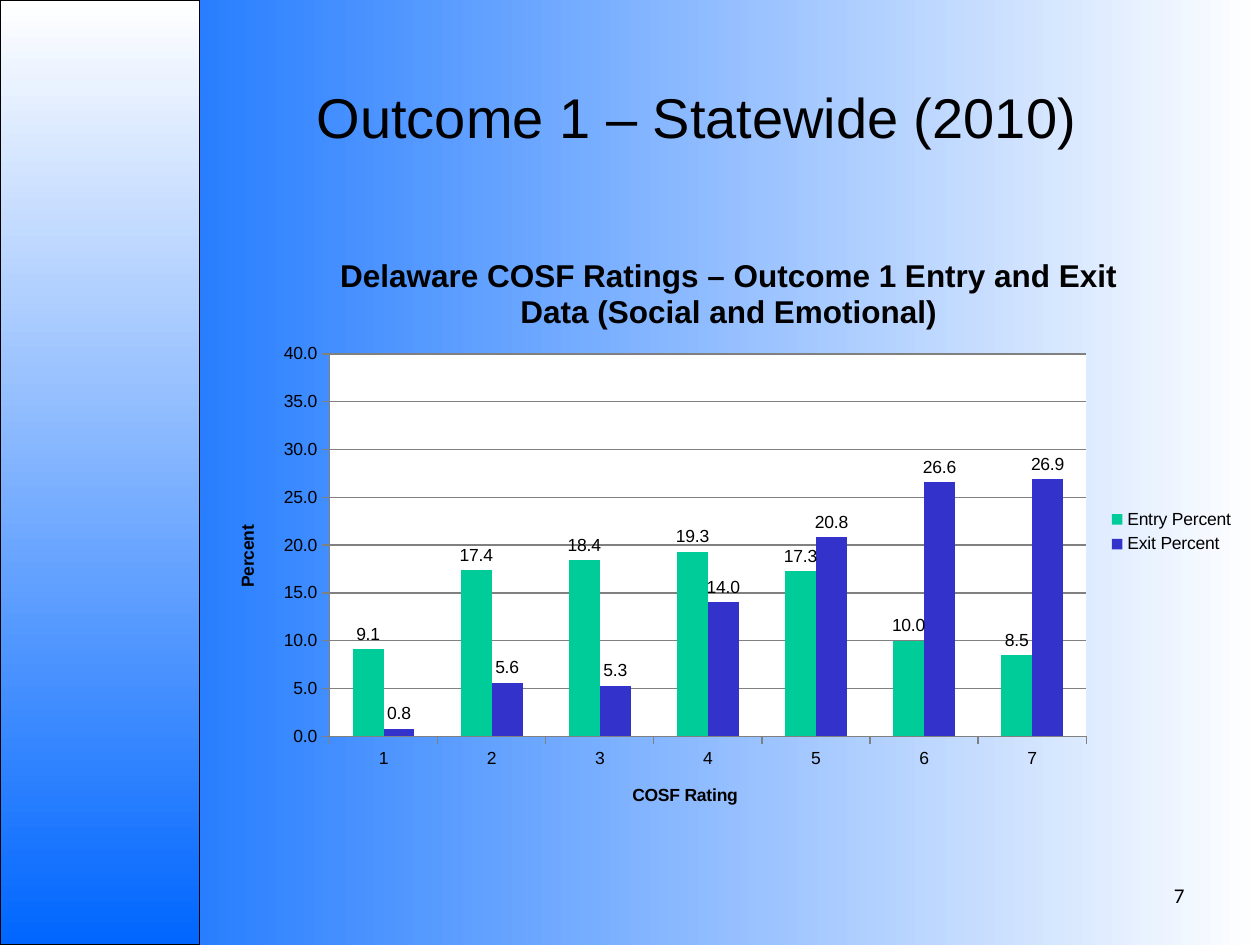
"""Build the statewide Outcome 1 slide with its entry and exit ratings chart."""
from dataclasses import dataclass

from lxml import etree
from pptx import Presentation
from pptx import util as u
from pptx.chart.data import CategoryChartData
from pptx.dml.color import RGBColor
from pptx.enum import chart as charts, shapes, text
from pptx.oxml import parse_xml
from pptx.oxml.ns import nsdecls, qn


@dataclass(frozen=True)
class Theme:
    blue = RGBColor.from_string("0066FF")
    white = RGBColor.from_string("FFFFFF")
    black = RGBColor.from_string("000000")
    grid = RGBColor.from_string("808080")
    series = (RGBColor.from_string("00CC99"), RGBColor.from_string("3333CC"))
    font = "Arial"
    number_font = "Calibri"
    title_size = u.Pt(32)
    chart_title_size = u.Pt(18)
    number_size = u.Pt(12)
    chart_size = u.Pt(10)


def fill_gradient(fill, start, end, angle):
    fill.gradient()
    fill.gradient_angle = angle
    for stop, color in zip(fill.gradient_stops, (start, end)):
        stop.color.rgb = color


def add_line_of_text(slide, box, wording, font_name, size, alignment):
    shape = slide.shapes.add_textbox(*map(u.Cm, box))
    frame = shape.text_frame
    frame.word_wrap = True
    frame.vertical_anchor = text.MSO_ANCHOR.BOTTOM
    paragraph = frame.paragraphs[0]
    paragraph.text = wording
    paragraph.alignment = alignment
    paragraph.font.name = font_name
    paragraph.font.size = size
    paragraph.font.color.rgb = theme.black
    return paragraph


theme = Theme()
presentation = Presentation()
presentation.slide_width, presentation.slide_height = u.Cm(25.4), u.Cm(19.05)
slide = presentation.slides.add_slide(presentation.slide_layouts[6])
fill_gradient(slide.background.fill, theme.blue, theme.white, 0)

side_band = slide.shapes.add_shape(
    shapes.MSO_SHAPE.RECTANGLE, 0, 0, u.Cm(4.02), presentation.slide_height)
side_band.shadow.inherit = False
fill_gradient(side_band.fill, theme.white, theme.blue, 270)
side_band.line.color.rgb = theme.black
side_band.line.width = u.Pt(0.75)

title = add_line_of_text(slide, (4.65, 0.84, 18.8, 2.31), "Outcome 1 – Statewide (2010)",
                         theme.font, theme.title_size, text.PP_ALIGN.CENTER)
title.line_spacing = 0.85
add_line_of_text(slide, (20.32, 17.15, 3.81, 1.27), "7",
                 theme.number_font, theme.number_size, text.PP_ALIGN.RIGHT)

ratings = CategoryChartData(number_format="0.0")
ratings.categories = [str(rating) for rating in range(1, 8)]
ratings.add_series("Entry Percent", (9.1, 17.4, 18.4, 19.3, 17.3, 10.0, 8.5))
ratings.add_series("Exit Percent", (0.8, 5.6, 5.3, 14.0, 20.8, 26.6, 26.9))
chart = slide.shapes.add_chart(
    charts.XL_CHART_TYPE.COLUMN_CLUSTERED,
    u.Cm(4.24), u.Cm(4.65), u.Cm(20.9), u.Cm(12.14), ratings).chart
chart.font.name = theme.font
chart.font.size = theme.chart_size
chart.font.color.rgb = theme.black

plot = chart.plots[0]
plot.vary_by_categories = False
plot.gap_width = 150
plot.overlap = 0
for series, color in zip(plot.series, theme.series):
    series.format.fill.solid()
    series.format.fill.fore_color.rgb = color
    labels = series.data_labels
    labels.show_value = True
    labels.number_format = "0.0"
    labels.number_format_is_linked = False
    labels.position = charts.XL_LABEL_POSITION.OUTSIDE_END

category_axis, value_axis = chart.category_axis, chart.value_axis
value_axis.minimum_scale, value_axis.maximum_scale = 0, 40
value_axis.major_unit = 5
value_axis.tick_labels.number_format = "0.0"
value_axis.tick_labels.number_format_is_linked = False
value_axis.has_major_gridlines = True
for line in (value_axis.major_gridlines.format.line,
             value_axis.format.line, category_axis.format.line):
    line.color.rgb = theme.grid
    line.width = u.Pt(0.75)
for axis in (category_axis, value_axis):
    axis.major_tick_mark = charts.XL_TICK_MARK.OUTSIDE

for owner, wording, size in (
        (chart, "Delaware COSF Ratings – Outcome 1 Entry and Exit Data (Social and Emotional)",
         theme.chart_title_size),
        (category_axis, "COSF Rating", theme.chart_size),
        (value_axis, "Percent", theme.chart_size)):
    heading = owner.chart_title if owner is chart else owner.axis_title
    paragraph = heading.text_frame.paragraphs[0]
    paragraph.text = wording
    paragraph.font.name = theme.font
    paragraph.font.size = size
    paragraph.font.bold = True
    paragraph.font.color.rgb = theme.black
value_axis.axis_title.text_frame._txBody.find(qn("a:bodyPr")).set("rot", "-5400000")

chart.has_legend = True
chart.legend.position = charts.XL_LEGEND_POSITION.RIGHT
chart.legend.include_in_layout = False

plot_area = chart._chartSpace.chart.plotArea
for old_layout in plot_area.findall(qn("c:layout")):
    plot_area.remove(old_layout)
layout = parse_xml(f"<c:layout {nsdecls('c')}><c:manualLayout/></c:layout>")
for tag, value in (("layoutTarget", "inner"), ("xMode", "edge"), ("yMode", "edge"),
                   ("x", 0.115), ("y", 0.205), ("w", 0.73), ("h", 0.635)):
    etree.SubElement(layout[0], qn(f"c:{tag}")).set("val", str(value))
plot_area.insert(0, layout)
plot_area.append(parse_xml(
    f"<c:spPr {nsdecls('c', 'a')}><a:solidFill><a:srgbClr val='{theme.white}'/>"
    "</a:solidFill></c:spPr>"))

presentation.save("out.pptx")
